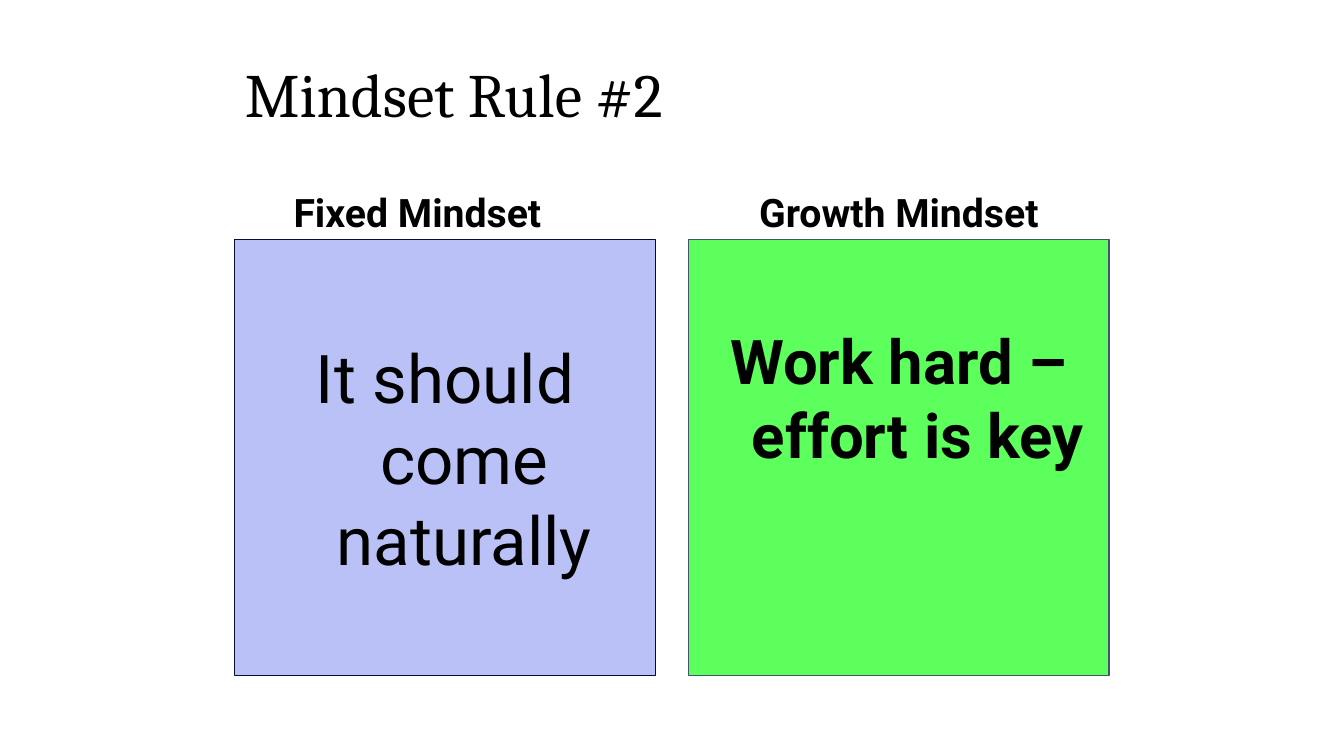
from pptx import Presentation
from pptx.dml.color import RGBColor
from pptx.enum.shapes import MSO_SHAPE
from pptx.enum.text import MSO_ANCHOR, PP_ALIGN
from pptx.util import Inches, Pt

# Content
TITLE = "Mindset Rule #2"
COLORS = {"text": "000000", "fixed": "B9C1F6", "fixed_line": "060D35",
          "growth": "5CFF5C", "growth_line": "44546A"}
COLUMNS = [
    {"key": "fixed", "heading": "Fixed Mindset", "inset_right": 0.65,
     "rule": "It should come naturally", "size": 48, "bold": False, "inset_top": 0.96},
    {"key": "growth", "heading": "Growth Mindset", "inset_right": 0.1,
     "rule": "Work hard – effort is key", "size": 44, "bold": True, "inset_top": 0.82},
]

# Layout in inches
LEFT, COL_W, GAP = 2.33, 4.17, 0.33
HEAD_TOP, HEAD_H, BOX_H = 1.68, 0.7, 4.32
HANGING = 0.38


def rgb(name):
    return RGBColor.from_string(COLORS[name])


def write(sp, text, size, font="Roboto", bold=False, align=PP_ALIGN.CENTER,
          anchor=MSO_ANCHOR.TOP, top=0.05, right=0.1):
    tf = sp.text_frame
    tf.word_wrap = True
    tf.vertical_anchor = anchor
    tf.margin_left, tf.margin_right = Inches(0.1), Inches(right)
    tf.margin_top, tf.margin_bottom = Inches(top), Inches(0.05)
    p = tf.paragraphs[0]
    p.alignment = align
    r = p.add_run()
    r.text = text
    r.font.name, r.font.size, r.font.bold = font, Pt(size), bold
    r.font.color.rgb = rgb("text")
    return p


prs = Presentation()
prs.slide_width, prs.slide_height = Inches(13.33), Inches(7.5)
s = prs.slides.add_slide(prs.slide_layouts[6])

# Title
sp = s.shapes.add_textbox(Inches(LEFT), Inches(0.3), Inches(2 * COL_W + GAP), Inches(1.25))
write(sp, TITLE, 44, font="Cambria", align=PP_ALIGN.LEFT, anchor=MSO_ANCHOR.MIDDLE)

for i, col in enumerate(COLUMNS):
    x = Inches(LEFT + i * (COL_W + GAP))

    # Column heading
    sp = s.shapes.add_textbox(x, Inches(HEAD_TOP), Inches(COL_W), Inches(HEAD_H))
    write(sp, col["heading"], 28, bold=True, anchor=MSO_ANCHOR.BOTTOM,
          right=col["inset_right"])

    # Rule box
    sp = s.shapes.add_shape(MSO_SHAPE.RECTANGLE, x, Inches(HEAD_TOP + HEAD_H),
                            Inches(COL_W), Inches(BOX_H))
    sp.shadow.inherit = False
    sp.fill.solid()
    sp.fill.fore_color.rgb = rgb(col["key"])
    sp.line.color.rgb = rgb(col["key"] + "_line")
    sp.line.width = Pt(0.75)
    p = write(sp, col["rule"], col["size"], bold=col["bold"], top=col["inset_top"])

    # Hanging indent
    pPr = p._p.get_or_add_pPr()
    pPr.set("marL", str(Inches(HANGING)))
    pPr.set("indent", str(-Inches(HANGING)))

prs.save("out.pptx")
